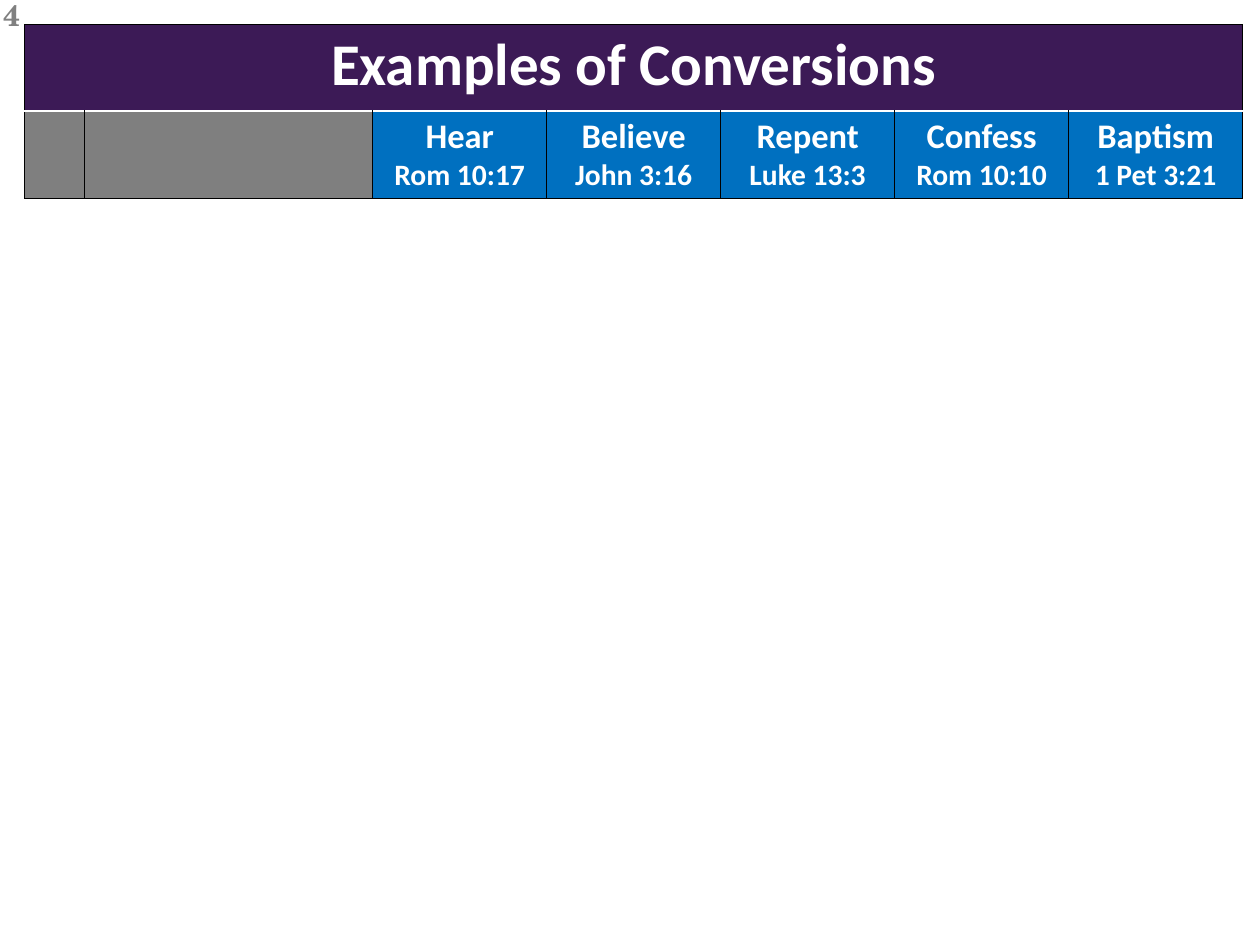
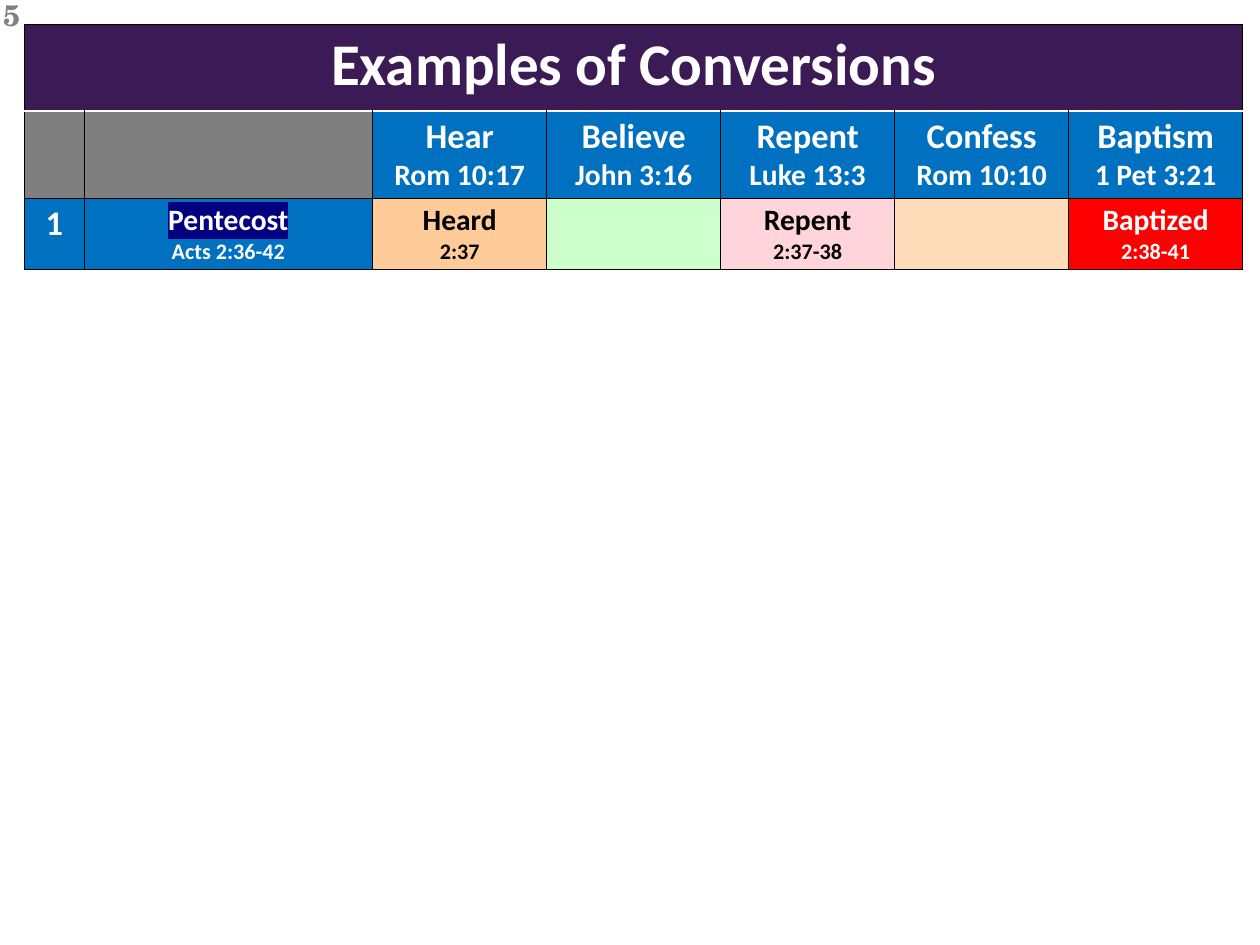
"""Build two slides that chart examples of conversions."""
from dataclasses import dataclass
from typing import Optional

import pptx
import pptx.dml.color
import pptx.enum.text
import pptx.oxml
import pptx.oxml.ns
import pptx.presentation
import pptx.slide
import pptx.table
import pptx.util

Pt = pptx.util.Pt
RGB = pptx.dml.color.RGBColor.from_string


@dataclass(frozen=True)
class Theme:
    font: str = "Calibri"
    number_font: str = "TeX Gyre Schola"
    white: str = "FFFFFF"
    black: str = "000000"
    purple: str = "3C1A56"
    blue: str = "0070C0"
    navy: str = "000080"
    blank: str = "7F7F7F"
    number_gray: str = "808080"
    orange: str = "FFCC99"
    green: str = "CCFFCC"
    pink: str = "FFD5DB"
    peach: str = "FFDCB9"
    red: str = "FF0000"
    title: int = 48
    head: int = 28
    entry: int = 24
    verse: int = 18
    thin: float = 0.75
    thick: float = 2


T = Theme()


@dataclass(frozen=True)
class Line:
    text: str
    size: int
    highlight: Optional[str] = None


@dataclass(frozen=True)
class Cell:
    fill: str
    lines: tuple[Line, ...] = ()
    color: str = T.white


def step(name: str, verse: str) -> Cell:
    return Cell(T.blue, (Line(name, T.head), Line(verse, T.entry)))


def entry(fill: str, name: str, verse: str, color: str = T.black,
          highlight: Optional[str] = None) -> Cell:
    return Cell(fill, (Line(name, T.entry, highlight), Line(verse, T.verse)), color)


LEFT = TOP = 20
COLUMNS = [48.2, 234.7] + [141.4] * 5
HEAD_HEIGHT, ENTRY_HEIGHT = 70.5, 56.5
TITLE = Cell(T.purple, (Line("Examples of Conversions", T.title),))
STEPS = [
    Cell(T.blank),
    Cell(T.blank),
    step("Hear", "Rom 10:17"),
    step("Believe", "John 3:16"),
    step("Repent", "Luke 13:3"),
    step("Confess", "Rom 10:10"),
    step("Baptism", "1 Pet 3:21"),
]
PENTECOST = [
    Cell(T.blue, (Line("1", T.head),)),
    entry(T.blue, "Pentecost", "Acts 2:36-42", T.white, T.navy),
    entry(T.orange, "Heard", "2:37"),
    Cell(T.green),
    entry(T.pink, "Repent", "2:37-38"),
    Cell(T.peach),
    entry(T.red, "Baptized", "2:38-41", T.white),
]
SLIDES = {4: [], 5: [PENTECOST]}


def add_xml(parent, tag: str, color: str, attrs: str = "", wrap: bool = False) -> None:
    inner = f'<a:srgbClr val="{color}"/>'
    if wrap:
        inner = f"<a:solidFill>{inner}</a:solidFill>"
    ns = pptx.oxml.ns.nsdecls("a")
    parent.append(pptx.oxml.parse_xml(f"<a:{tag} {ns} {attrs}>{inner}</a:{tag}>"))


def set_font(p, name: str, size: int, color: str) -> None:
    p.font.name = name
    p.font.size = Pt(size)
    p.font.bold = True
    p.font.color.rgb = RGB(color)


def set_borders(cell, row: int) -> None:
    white_side = {0: "lnB", 1: "lnT"}.get(row)
    for side in ("lnL", "lnR", "lnT", "lnB"):
        color, width = (T.white, T.thick) if side == white_side else (T.black, T.thin)
        add_xml(cell._tc.get_or_add_tcPr(), side, color, f'w="{Pt(width)}"', wrap=True)


def fill_cell(cell, content: Cell) -> None:
    cell.fill.solid()
    cell.fill.fore_color.rgb = RGB(content.fill)
    tf = cell.text_frame
    for i, line in enumerate(content.lines):
        p = tf.add_paragraph() if i else tf.paragraphs[0]
        p.alignment = pptx.enum.text.PP_ALIGN.CENTER
        set_font(p, T.font, line.size, content.color)
        r = p.add_run()
        r.text = line.text
        if line.highlight:
            add_xml(r._r.get_or_add_rPr(), "highlight", line.highlight)


def add_number(s: pptx.slide.Slide, number: int) -> None:
    tf = s.shapes.add_textbox(Pt(-4.5), Pt(-6), Pt(96.5), Pt(24)).text_frame
    tf.word_wrap = True
    p = tf.paragraphs[0]
    set_font(p, T.number_font, T.entry, T.number_gray)
    p.add_run().text = str(number)


def add_chart_table(s: pptx.slide.Slide, entries: list[list[Cell]]) -> None:
    rows = [[TITLE] * len(COLUMNS), STEPS, *entries]
    heights = [HEAD_HEIGHT] * 2 + [ENTRY_HEIGHT] * len(entries)
    table: pptx.table.Table = s.shapes.add_table(
        len(rows), len(COLUMNS), Pt(LEFT), Pt(TOP), Pt(sum(COLUMNS)), Pt(sum(heights))).table
    table.first_row = table.horz_banding = False
    for column, width in zip(table.columns, COLUMNS):
        column.width = Pt(width)
    table.cell(0, 0).merge(table.cell(0, len(COLUMNS) - 1))
    for i, (row, height) in enumerate(zip(rows, heights)):
        table.rows[i].height = Pt(height)
        for j, content in enumerate(row):
            cell = table.cell(i, j)
            set_borders(cell, i)
            if not cell.is_spanned:
                fill_cell(cell, content)


def main() -> None:
    prs: pptx.presentation.Presentation = pptx.Presentation()
    prs.slide_width, prs.slide_height = Pt(1024), Pt(768)
    for number, entries in SLIDES.items():
        s = prs.slides.add_slide(prs.slide_layouts[6])
        add_number(s, number)
        add_chart_table(s, entries)
    prs.save("out.pptx")


if __name__ == "__main__":
    main()
